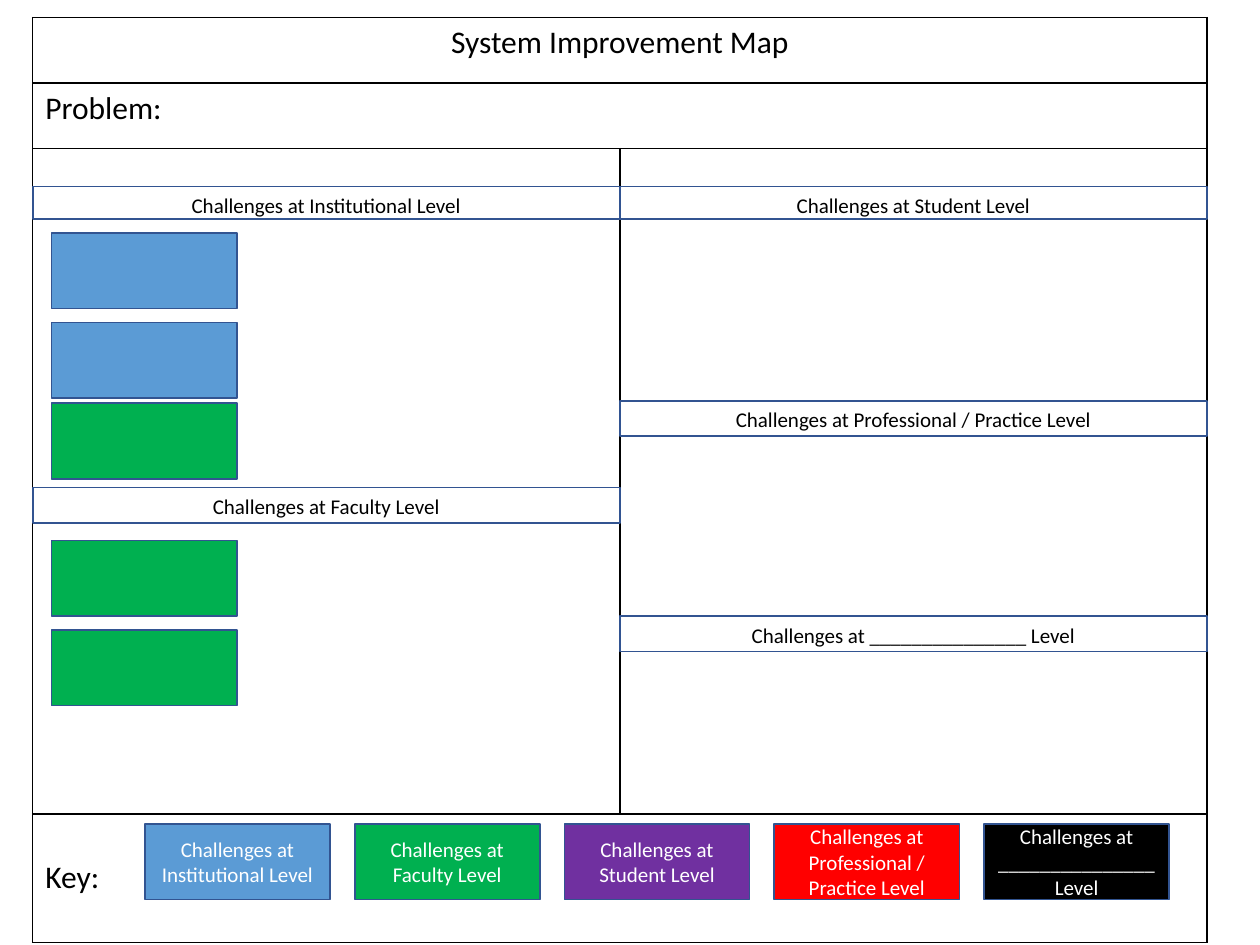
import pptx
import pptx.dml.color
import pptx.enum.shapes
import pptx.enum.text
import pptx.oxml.ns
import pptx.util
from lxml import etree
from pptx.util import Inches

THEME = {
    "font": "Calibri", "heading_size": 18, "label_size": 12,
    "ink": "000000", "light": "FFFFFF", "outline": "325491",
    "institutional": "5B9BD5", "faculty": "00B050", "student": "7030A0",
    "professional": "FF0000", "other": "000000",
}

LABELS = {
    "institutional": "Challenges at Institutional Level",
    "faculty": "Challenges at Faculty Level",
    "student": "Challenges at Student Level",
    "professional": "Challenges at Professional / Practice Level",
    "other": "Challenges at _______________ Level",
}

MAP_LEFT, MAP_TOP, COLUMN_WIDTH = 0.26, 0.14, 4.66
ROW_HEIGHTS = [0.52, 0.52, 5.28, 1.02]
# row, text, alignment, top margin
MERGED_ROWS = [
    (0, "System Improvement Map", pptx.enum.text.PP_ALIGN.CENTER, 0.05),
    (1, "Problem:", pptx.enum.text.PP_ALIGN.LEFT, 0.05),
    (3, "Key:", pptx.enum.text.PP_ALIGN.LEFT, 0.35),
]
# level, column, top, height
BANNERS = [
    ("institutional", 0, 1.48, 0.26), ("faculty", 0, 3.87, 0.28),
    ("student", 1, 1.48, 0.26), ("professional", 1, 3.18, 0.28),
    ("other", 1, 4.89, 0.28),
]
# level, top
NOTES = [
    ("institutional", 1.85), ("institutional", 2.56), ("faculty", 3.2),
    ("faculty", 4.29), ("faculty", 5.0),
]
CARD_WIDTH, CARD_HEIGHT = 1.47, 0.6
NOTE_LEFT = 0.41
KEY_LEFT, KEY_TOP, KEY_STEP = 1.15, 6.54, 1.665


def color(name):
    return pptx.dml.color.RGBColor.from_string(THEME[name])


def write(text_frame, text, size, ink, alignment):
    paragraph = text_frame.paragraphs[0]
    paragraph.alignment = alignment
    run = paragraph.add_run()
    run.text = text
    run.font.name = THEME["font"]
    run.font.size = pptx.util.Pt(THEME[size])
    run.font.color.rgb = color(ink)


def add_borders(cell):
    """Draw a thin line on all four sides; borders must precede the fill."""
    properties = cell._tc.get_or_add_tcPr()
    for index, side in enumerate(("lnL", "lnR", "lnT", "lnB")):
        line = etree.Element(pptx.oxml.ns.qn("a:" + side), w="12700")
        fill = etree.SubElement(line, pptx.oxml.ns.qn("a:solidFill"))
        etree.SubElement(fill, pptx.oxml.ns.qn("a:srgbClr"), val=THEME["ink"])
        properties.insert(index, line)


def add_map_table(slide):
    table = slide.shapes.add_table(
        len(ROW_HEIGHTS), 2, Inches(MAP_LEFT), Inches(MAP_TOP),
        Inches(2 * COLUMN_WIDTH), Inches(sum(ROW_HEIGHTS))).table
    table.first_row = table.horz_banding = False
    for column in table.columns:
        column.width = Inches(COLUMN_WIDTH)
    for row, height in zip(table.rows, ROW_HEIGHTS):
        row.height = Inches(height)
    for cell in table.iter_cells():
        cell.fill.background()
        add_borders(cell)
    for row, text, alignment, margin in MERGED_ROWS:
        cell = table.cell(row, 0)
        cell.merge(table.cell(row, 1))
        cell.margin_top = Inches(margin)
        write(cell.text_frame, text, "heading_size", "ink", alignment)


def add_box(slide, left, top, width, height, fill=None, text=None,
            ink="light", anchor=pptx.enum.text.MSO_ANCHOR.MIDDLE):
    shape = slide.shapes.add_shape(
        pptx.enum.shapes.MSO_SHAPE.RECTANGLE,
        Inches(left), Inches(top), Inches(width), Inches(height))
    shape.shadow.inherit = False
    if fill:
        shape.fill.solid()
        shape.fill.fore_color.rgb = color(fill)
    else:
        shape.fill.background()
    shape.line.color.rgb = color("outline")
    shape.line.width = pptx.util.Pt(1)
    if text:
        shape.text_frame.word_wrap = True
        shape.text_frame.vertical_anchor = anchor
        write(shape.text_frame, text, "label_size", ink,
              pptx.enum.text.PP_ALIGN.CENTER)


def main():
    presentation = pptx.Presentation()
    presentation.slide_width = Inches(10)
    presentation.slide_height = Inches(7.5)
    slide = presentation.slides.add_slide(presentation.slide_layouts[6])

    add_map_table(slide)
    for index, (level, label) in enumerate(LABELS.items()):
        add_box(slide, KEY_LEFT + index * KEY_STEP, KEY_TOP,
                CARD_WIDTH, CARD_HEIGHT, level, label)
    for level, column, top, height in BANNERS:
        add_box(slide, MAP_LEFT + column * COLUMN_WIDTH, top,
                COLUMN_WIDTH, height, text=LABELS[level], ink="ink",
                anchor=pptx.enum.text.MSO_ANCHOR.TOP)
    for level, top in NOTES:
        add_box(slide, NOTE_LEFT, top, CARD_WIDTH, CARD_HEIGHT, level)

    presentation.save("out.pptx")


if __name__ == "__main__":
    main()
